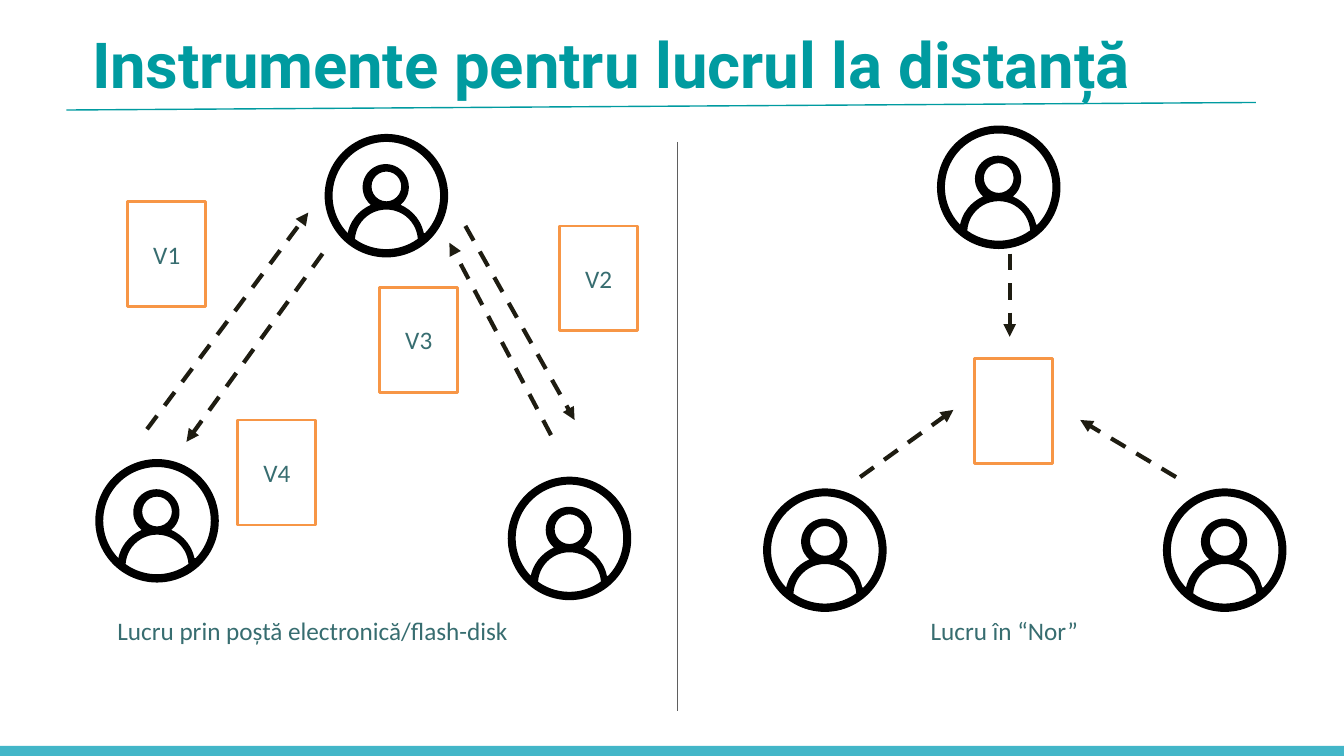
"""Build a slide comparing document exchange by e-mail with work in the cloud."""
from math import cos, radians, sin

from lxml import etree
from pptx import Presentation
from pptx.dml.color import RGBColor
from pptx.enum.dml import MSO_LINE
from pptx.enum.shapes import MSO_CONNECTOR, MSO_SHAPE
from pptx.enum.text import MSO_ANCHOR, PP_ALIGN
from pptx.oxml.ns import qn
from pptx.util import Inches, Pt

RECTANGLE, STRAIGHT, DASH = MSO_SHAPE.RECTANGLE, MSO_CONNECTOR.STRAIGHT, MSO_LINE.DASH
MIDDLE, TOP = MSO_ANCHOR.MIDDLE, MSO_ANCHOR.TOP
LEFT, CENTER = PP_ALIGN.LEFT, PP_ALIGN.CENTER

THEME = {
    "teal": RGBColor.from_string("009BA0"),
    "footer": RGBColor.from_string("43B6C8"),
    "divider": RGBColor.from_string("5F5F5F"),
    "arrow": RGBColor.from_string("1E1C11"),
    "orange": RGBColor.from_string("F79646"),
    "white": RGBColor.from_string("FFFFFF"),
    "black": RGBColor.from_string("000000"),
    "title": {"name": "Roboto", "size": Pt(45.3), "bold": True},
    "body": {"name": "Calibri", "size": Pt(18), "bold": False},
    "text": RGBColor.from_string("376D70"),
}

deck = Presentation()
deck.slide_width, deck.slide_height = Inches(13.333), Inches(7.5)
page = deck.slides.add_slide(deck.slide_layouts[6])
CELL = deck.slide_height / 90
COLUMNS = 160


def grid(*cells):
    """Turn numbers of grid cells into lengths."""
    return [int(number * CELL) for number in cells]


def write(box, words, style, color, align, anchor):
    """Put one formatted line of text into a shape."""
    box.text_frame.vertical_anchor = anchor
    para = box.text_frame.paragraphs[0]
    para.alignment = align
    span = para.add_run()
    span.text = words
    for attribute, value in THEME[style].items():
        setattr(span.font, attribute, value)
    span.font.color.rgb = THEME[color]


footer = page.shapes.add_shape(RECTANGLE, *grid(0, 88.8, COLUMNS, 1.3))
footer.shadow.inherit = False
footer.fill.solid()
footer.fill.fore_color.rgb = THEME["footer"]
footer.line.fill.background()

title = page.shapes.add_textbox(*grid(9.4, 0, 141.4, 15))
title.text_frame.word_wrap = True
title.text_frame.margin_left = title.text_frame.margin_right = Inches(0.13)
write(title, "Instrumente pentru lucrul la distanță", "title", "teal", LEFT, MIDDLE)

lines = [
    ("teal", 1, 7.9, 13.1, 149.5, 12.2),
    ("divider", 0.75, 80.6, 16.9, 80.6, 84.6),
    ("arrow", 3, 17.5, 51.1, 36.7, 25.3),
    ("arrow", 3, 55.4, 26.9, 68.4, 50),
    ("arrow", 3, 65.6, 51.8, 53.5, 28.9),
    ("arrow", 3, 38.4, 30.2, 22.2, 52.6),
    ("arrow", 3, 102.4, 56.8, 113.5, 48.8),
    ("arrow", 3, 140, 56.8, 128.6, 50),
    ("arrow", 3, 120.2, 30.2, 120.2, 40.1),
]
for color, weight, *ends in lines:
    connector = page.shapes.add_connector(STRAIGHT, *grid(*ends))
    connector.line.color.rgb = THEME[color]
    connector.line.width = Pt(weight)
    if color == "arrow":
        connector.line.dash_style = DASH
        outline = connector._element.spPr.find(qn("a:ln"))
        etree.SubElement(outline, qn("a:tailEnd"), type="triangle")
    etree.SubElement(connector._element.spPr, qn("a:effectLst"))

documents = [("V1", 15.2, 24), ("V2", 66.6, 26.9), ("V3", 45.2, 34.2),
             ("V4", 28.3, 50), ("", 116, 42.7)]
for version, left, top in documents:
    sheet = page.shapes.add_shape(RECTANGLE, *grid(left, top, 9.3, 12.5))
    sheet.shadow.inherit = False
    sheet.fill.solid()
    sheet.fill.fore_color.rgb = THEME["white"]
    sheet.line.color.rgb = THEME["orange"]
    sheet.line.width = Pt(2)
    if version:
        write(sheet, version, "body", "text", CENTER, MIDDLE)

UNITS = 1000
DISC, RING, HEAD_Y, HEAD, BODY_Y, SHOULDER = 7.35, 6.4, -1.1, 1.77, 5.4, 4.7
contours = [
    [(0, DISC, 0, 180), (0, DISC, 180, 180)],
    [(HEAD_Y, HEAD, 0, 180), (HEAD_Y, HEAD, 180, 180)],
    [(BODY_Y, 3.75, 184, 172), (0, RING, 54, 72)],
    [(0, RING, 44, -268), (BODY_Y, SHOULDER, 192, 55),
     (HEAD_Y, 2.75, 130, 280), (BODY_Y, SHOULDER, 293, 55)],
]
people = [(46, 23.3), (18.7, 62), (67.8, 64.1),
          (118.9, 22.3), (98.2, 65.5), (145.8, 65.5)]
side = int(2 * DISC * UNITS)
for column, row in people:
    builder = page.shapes.build_freeform(0, 0, scale=CELL / UNITS)
    builder.add_line_segments([(side, 0), (side, side), (0, side)], close=True)
    person = builder.convert_to_shape(*grid(column - DISC, row - DISC))
    person.shadow.inherit = False
    person.fill.solid()
    person.fill.fore_color.rgb = THEME["black"]
    person.line.fill.background()
    curve = next(person._element.iter(qn("a:path")))
    for segment in list(curve):
        curve.remove(segment)
    for contour in contours:
        center_y, radius, start, _ = contour[0]
        move = etree.SubElement(curve, qn("a:moveTo"))
        etree.SubElement(
            move, qn("a:pt"),
            x=str(round(UNITS * (DISC + radius * cos(radians(start))))),
            y=str(round(UNITS * (DISC + center_y + radius * sin(radians(start))))))
        for center_y, radius, start, sweep in contour:
            size = str(round(UNITS * radius))
            etree.SubElement(curve, qn("a:arcTo"), wR=size, hR=size,
                             stAng=str(start * 60000), swAng=str(sweep * 60000))
        etree.SubElement(curve, qn("a:close"))

captions = [("Lucru prin poștă electronică/flash-disk", 12.8, 49.4),
            ("Lucru în “Nor”", 109.6, 20.9)]
for words, left, width in captions:
    caption = page.shapes.add_textbox(*grid(left, 72.7, width, 4.8))
    caption.text_frame.word_wrap = False
    write(caption, words, "body", "text", LEFT, TOP)

deck.save("out.pptx")
